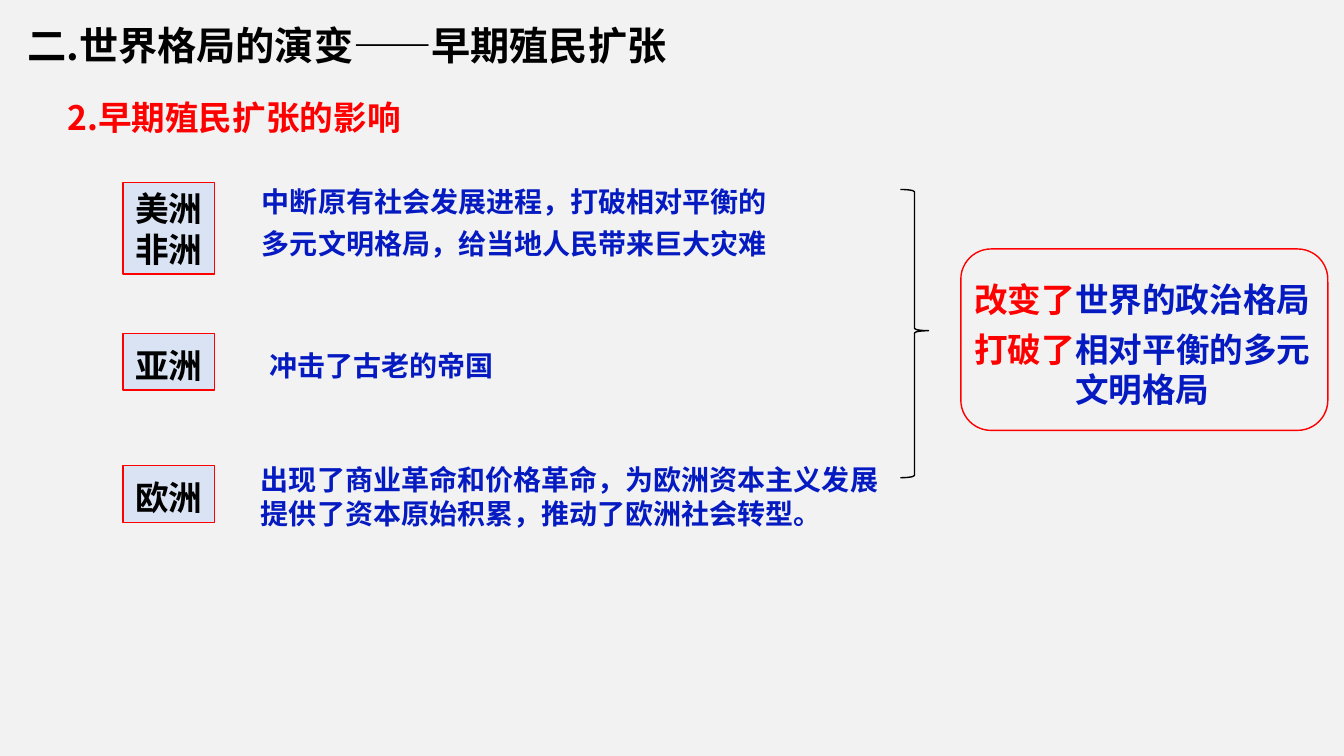
from dataclasses import dataclass

from lxml.etree import SubElement
from pptx import Presentation
from pptx.dml.color import RGBColor
from pptx.enum.shapes import MSO_SHAPE
from pptx.enum.text import MSO_ANCHOR, MSO_AUTO_SIZE, PP_ALIGN
from pptx.oxml.ns import qn
from pptx.shapes.autoshape import Shape
from pptx.slide import Slide
from pptx.text.text import TextFrame, _Paragraph
from pptx.util import Inches, Pt

FONT = "Noto Sans CJK SC"
BLACK = RGBColor(0x00, 0x00, 0x00)
RED = RGBColor(0xFF, 0x00, 0x00)
BLUE = RGBColor(0x05, 0x1B, 0xC1)
PALE = RGBColor(0xDA, 0xE3, 0xF3)
GRAY = RGBColor(0xF2, 0xF2, 0xF2)


@dataclass(frozen=True)
class Box:
    left: float
    top: float
    width: float
    height: float

    def lengths(self) -> list[Inches]:
        return [Inches(n) for n in (self.left, self.top, self.width, self.height)]


@dataclass(frozen=True)
class Region:
    """A continent label with the effect of expansion on it."""
    names: str
    top: float
    height: float
    border: float
    effect: str
    area: Box
    spacing: float = 1.0


REGIONS = [
    Region("美洲\n非洲", 1.81, 0.91, 1,
           "中断原有社会发展进程，打破相对平衡的\n多元文明格局，给当地人民带来巨大灾难",
           Box(2.5, 1.7, 5.53, 0.94), 1.25),
    Region("亚洲", 3.31, 0.56, 0.75, "冲击了古老的帝国",
           Box(2.57, 3.32, 3.1, 0.52), 1.25),
    Region("欧洲", 4.62, 0.56, 0.75,
           "出现了商业革命和价格革命，为欧洲资本主义发展"
           "提供了资本原始积累，推动了欧洲社会转型。",
           Box(2.49, 4.54, 6.43, 0.77)),
]
RESULTS = [("改变了", "世界的政治格局"), ("打破了", "相对平衡的多元文明格局")]


def style_line(para: _Paragraph, size: int, colors: list[RGBColor],
               align: PP_ALIGN, spacing: float = 1.0) -> None:
    para.alignment = align
    para.line_spacing = Pt(round(size * 1.2 * spacing))
    for run, color in zip(para.runs, colors):
        font = run.font
        font.name, font.size, font.bold = FONT, Pt(size), True
        font.color.rgb = color
        SubElement(font._element, qn("a:ea"), typeface=FONT)


def write(frame: TextFrame, text: str, size: int, color: RGBColor,
          align: PP_ALIGN = PP_ALIGN.LEFT, spacing: float = 1.0,
          anchor: MSO_ANCHOR = MSO_ANCHOR.TOP) -> None:
    frame.text = text
    frame.word_wrap = True
    frame.auto_size = MSO_AUTO_SIZE.NONE
    frame.vertical_anchor = anchor
    for para in frame.paragraphs:
        style_line(para, size, [color], align, spacing)


def add_text(slide: Slide, box: Box) -> TextFrame:
    frame = slide.shapes.add_textbox(*box.lengths()).text_frame
    frame.word_wrap = True
    return frame


def add_shape(slide: Slide, kind: MSO_SHAPE, box: Box, color: RGBColor,
              border: float = 1) -> Shape:
    """Add an unfilled outline without a shadow."""
    shape = slide.shapes.add_shape(kind, *box.lengths())
    shape.shadow.inherit = False
    shape.fill.background()
    shape.line.color.rgb = color
    shape.line.width = Pt(border)
    return shape


def add_region(slide: Slide, region: Region) -> None:
    label = add_shape(slide, MSO_SHAPE.RECTANGLE,
                      Box(1.22, region.top, 0.91, region.height),
                      RED, region.border)
    label.fill.solid()
    label.fill.fore_color.rgb = PALE
    spacing = 1.0 if "\n" in region.names else 1.14
    write(label.text_frame, region.names, 24, BLACK, PP_ALIGN.CENTER,
          spacing, MSO_ANCHOR.MIDDLE)
    write(add_text(slide, region.area), region.effect, 20, BLUE,
          spacing=region.spacing)


def add_results(slide: Slide) -> None:
    add_shape(slide, MSO_SHAPE.ROUNDED_RECTANGLE, Box(9.53, 2.47, 3.64, 1.8), RED)
    frame = add_text(slide, Box(9.49, 2.72, 3.68, 1.4))
    for i, parts in enumerate(RESULTS):
        para = frame.add_paragraph() if i else frame.paragraphs[0]
        for part in parts:
            para.add_run().text = part
        style_line(para, 24, [RED, BLUE], PP_ALIGN.CENTER)
    para.space_before = para.space_after = Pt(6)


def main() -> None:
    deck = Presentation()
    deck.slide_width, deck.slide_height = Inches(13.33), Inches(7.5)
    slide = deck.slides.add_slide(deck.slide_layouts[5])
    slide.background.fill.solid()
    slide.background.fill.fore_color.rgb = GRAY

    title = slide.shapes.title
    title.left, title.top, title.width, title.height = Box(0.17, 0.16, 6.98, 0.57).lengths()
    write(title.text_frame, "二.世界格局的演变——早期殖民扩张", 28, BLACK)
    write(add_text(slide, Box(0.57, 0.91, 3.82, 0.5)),
          "2.早期殖民扩张的影响", 24, RED)

    for region in REGIONS:
        add_region(slide, region)
    brace = add_shape(slide, MSO_SHAPE.RIGHT_BRACE, Box(8.93, 1.88, 0.28, 2.86), BLACK)
    brace.adjustments[0], brace.adjustments[1] = 0.08, 0.49
    add_results(slide)
    deck.save("out.pptx")


if __name__ == "__main__":
    main()
